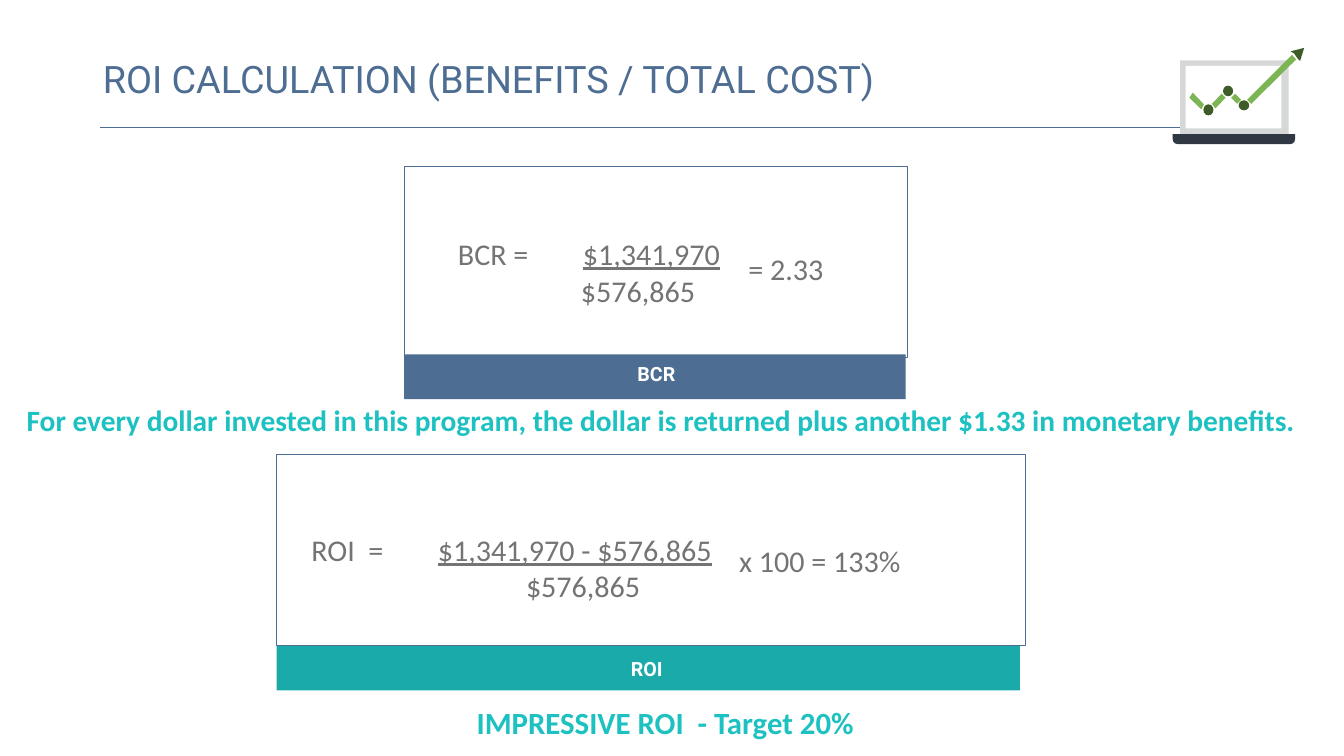
import dataclasses
import typing

import lxml.etree
import pptx
import pptx.dml.color
import pptx.enum.shapes
import pptx.enum.text
import pptx.oxml.ns
import pptx.util

PX = 9144
Shapes = pptx.enum.shapes.MSO_SHAPE
Align = pptx.enum.text.PP_ALIGN
Color = pptx.dml.color.RGBColor

BLUE = Color(0x4D, 0x6D, 0x92)
TEAL = Color(0x1B, 0xAA, 0xAA)
TURQUOISE = Color(0x1D, 0xC1, 0xC1)
GREY = Color(0x73, 0x75, 0x72)
WHITE = Color(0xFF, 0xFF, 0xFF)
SILVER = Color(0xD6, 0xD8, 0xD8)
SLATE = Color(0x30, 0x39, 0x43)
GREEN = Color(0x7C, 0xB5, 0x54)
DARK_GREEN = Color(0x3E, 0x5C, 0x28)

HEADING = {"name": "Roboto", "size": pptx.util.Pt(54), "bold": False}
LABEL = {"name": "Roboto", "size": pptx.util.Pt(28), "bold": True}
FORMULA = {"name": "Calibri", "size": pptx.util.Pt(43)}
RULED = {**FORMULA, "underline": True}
RETURN_NOTE = {"name": "Calibri", "size": pptx.util.Pt(42), "bold": True}
TARGET_NOTE = {**RETURN_NOTE, "size": pptx.util.Pt(44)}


class Area(typing.NamedTuple):
    left: int
    top: int
    width: int
    height: int


class Span(typing.NamedTuple):
    text: str
    style: dict
    color: Color


class Para(typing.NamedTuple):
    spans: list[Span]
    tabs: tuple[int, ...] = ()


@dataclasses.dataclass(frozen=True)
class Panel:
    label: str
    color: Color
    frame: Area
    bar: Area
    label_area: Area
    formula_area: Area
    left_side: str
    numerator: str
    denominator: str
    ruled_tabs: tuple[int, int]
    denominator_tab: int
    result: str
    result_area: Area


class Polygon(typing.NamedTuple):
    color: Color
    points: list[tuple[int, int]]


PANELS = [
    Panel("BCR", BLUE, Area(802, 330, 998, 379), Area(802, 703, 995, 89),
          Area(805, 709, 995, 67), Area(899, 463, 563, 155),
          "BCR =", "$1,341,970", "$576,865", (180, 248), 244,
          "= 2.33", Area(1475, 492, 171, 82)),
    Panel("ROI", TEAL, Area(549, 902, 1486, 379), Area(549, 1281, 1475, 89),
          Area(543, 1294, 1481, 67), Area(608, 1049, 1371, 155),
          "ROI  =", "$1,341,970 - $576,865", "$576,865", (184, 251), 426,
          "x 100 = 133%", Area(1457, 1072, 343, 82)),
]

TREND = [
    Polygon(GREEN, [(2367, 184), (2360, 194), (2384, 217), (2389, 207)]),
    Polygon(GREEN, [(2451, 186), (2443, 194), (2455, 206), (2463, 198)]),
    Polygon(GREEN, [(2424, 186), (2405, 206), (2412, 215), (2432, 194)]),
    Polygon(GREEN, [(2475, 198), (2483, 206), (2572, 118), (2564, 109)]),
    Polygon(DARK_GREEN, [(2561, 102), (2568, 106), (2575, 116), (2580, 121), (2588, 95)]),
]
DOTS = [Area(2388, 207, 20, 22), Area(2427, 170, 20, 21), Area(2458, 199, 21, 20)]


def scaled(lengths: typing.Iterable[int]) -> list[int]:
    return [length * PX for length in lengths]


def apply(target: typing.Any, values: dict) -> None:
    for name, value in values.items():
        setattr(target, name, value)


def place(target: typing.Any, area: Area) -> None:
    apply(target, dict(zip(Area._fields, scaled(area))))


def paint(shape: typing.Any, color: Color) -> None:
    shape.shadow.inherit = False
    shape.fill.solid()
    shape.fill.fore_color.rgb = color
    shape.line.fill.background()


def add_solid(shapes: typing.Any, kind: Shapes, area: Area, color: Color) -> typing.Any:
    shape = shapes.add_shape(kind, *scaled(area))
    paint(shape, color)
    return shape


def add_frame(page: typing.Any, area: Area) -> None:
    frame = page.shapes.add_shape(Shapes.RECTANGLE, *scaled(area))
    frame.shadow.inherit = False
    frame.fill.background()
    frame.line.color.rgb = BLUE
    frame.line.width = pptx.util.Pt(0.75)


def write_span(para: typing.Any, content: Span) -> None:
    span = para.add_run()
    span.text = content.text
    apply(span.font, content.style)
    span.font.color.rgb = content.color


def set_tabs(para: typing.Any, stops: tuple[int, ...]) -> None:
    name = pptx.oxml.ns.qn
    tabs = lxml.etree.SubElement(para._p.get_or_add_pPr(), name("a:tabLst"))
    for stop in stops:
        lxml.etree.SubElement(tabs, name("a:tab"), pos=str(stop * PX), algn="l")


def add_text(page: typing.Any, area: Area, paras: list[Para],
             align: Align = Align.LEFT, wrap: bool = True, margin: int = 10) -> None:
    box = page.shapes.add_textbox(*scaled(area))
    frame = box.text_frame
    apply(frame, {"word_wrap": wrap, "margin_left": margin * PX, "margin_right": margin * PX,
                  "margin_top": margin * PX // 2, "margin_bottom": margin * PX // 2})
    for index, content in enumerate(paras):
        para = frame.add_paragraph() if index else frame.paragraphs[0]
        para.alignment = align
        if content.tabs:
            set_tabs(para, content.tabs)
        for span in content.spans:
            write_span(para, span)


def add_title(page: typing.Any) -> None:
    title = page.shapes.title
    place(title, Area(194, 106, 1890, 101))
    apply(title.text_frame, {"word_wrap": True,
                             "auto_size": pptx.enum.text.MSO_AUTO_SIZE.NONE,
                             "vertical_anchor": pptx.enum.text.MSO_ANCHOR.TOP})
    para = title.text_frame.paragraphs[0]
    para.alignment = Align.LEFT
    write_span(para, Span("ROI CALCULATION (BENEFITS / TOTAL COST)", HEADING, BLUE))


def add_title_rule(page: typing.Any) -> None:
    rule = page.shapes.add_connector(pptx.enum.shapes.MSO_CONNECTOR.STRAIGHT,
                                     *scaled((198, 253, 2479, 253)))
    rule.line.color.rgb = BLUE
    rule.line.width = pptx.util.Pt(2.25)
    lxml.etree.SubElement(rule._element.spPr, pptx.oxml.ns.qn("a:effectLst"))


def add_laptop(page: typing.Any) -> None:
    shapes = page.shapes.add_group_shape().shapes
    add_solid(shapes, Shapes.RECTANGLE, Area(2342, 120, 215, 146), SILVER)
    base = add_solid(shapes, Shapes.ROUND_2_SAME_RECTANGLE, Area(2327, 266, 243, 20), SLATE)
    base.adjustments[0] = 0.5
    base.rotation = 180
    add_solid(shapes, Shapes.RECTANGLE, Area(2353, 131, 190, 124), WHITE)
    for polygon in TREND:
        builder = shapes.build_freeform(*polygon.points[0], scale=PX)
        builder.add_line_segments(polygon.points[1:], close=True)
        paint(builder.convert_to_shape(), polygon.color)
    for dot in DOTS:
        add_solid(shapes, Shapes.OVAL, dot, DARK_GREEN)


def add_panel(page: typing.Any, panel: Panel) -> None:
    add_solid(page.shapes, Shapes.RECTANGLE, panel.bar, panel.color)
    add_frame(page, panel.frame)
    add_text(page, panel.label_area, [Para([Span(panel.label, LABEL, WHITE)])],
             align=Align.CENTER, margin=20)
    add_text(page, panel.formula_area, [
        Para([Span(f"{panel.left_side}\t", FORMULA, GREY),
              Span(f"\t{panel.numerator}", RULED, GREY)], panel.ruled_tabs),
        Para([Span(f"\t{panel.denominator}", FORMULA, GREY)], (panel.denominator_tab,)),
    ])
    add_text(page, panel.result_area, [Para([Span(panel.result, FORMULA, GREY)])], wrap=False)


def main() -> None:
    deck = pptx.Presentation()
    apply(deck, {"slide_width": 2667 * PX, "slide_height": 1500 * PX})
    page = deck.slides.add_slide(deck.slide_layouts.get_by_name("Title Only"))
    add_title_rule(page)
    add_title(page)
    for panel in PANELS:
        add_panel(page, panel)
    add_laptop(page)
    add_text(page, Area(936, 1391, 1731, 84),
             [Para([Span("IMPRESSIVE ROI  - Target 20%", TARGET_NOTE, TURQUOISE)])])
    add_text(page, Area(43, 792, 2624, 81), [Para([Span(
        "For every dollar invested in this program, the dollar is returned "
        "plus another $1.33 in monetary benefits.", RETURN_NOTE, TURQUOISE)])])
    deck.save("out.pptx")


if __name__ == "__main__":
    main()
